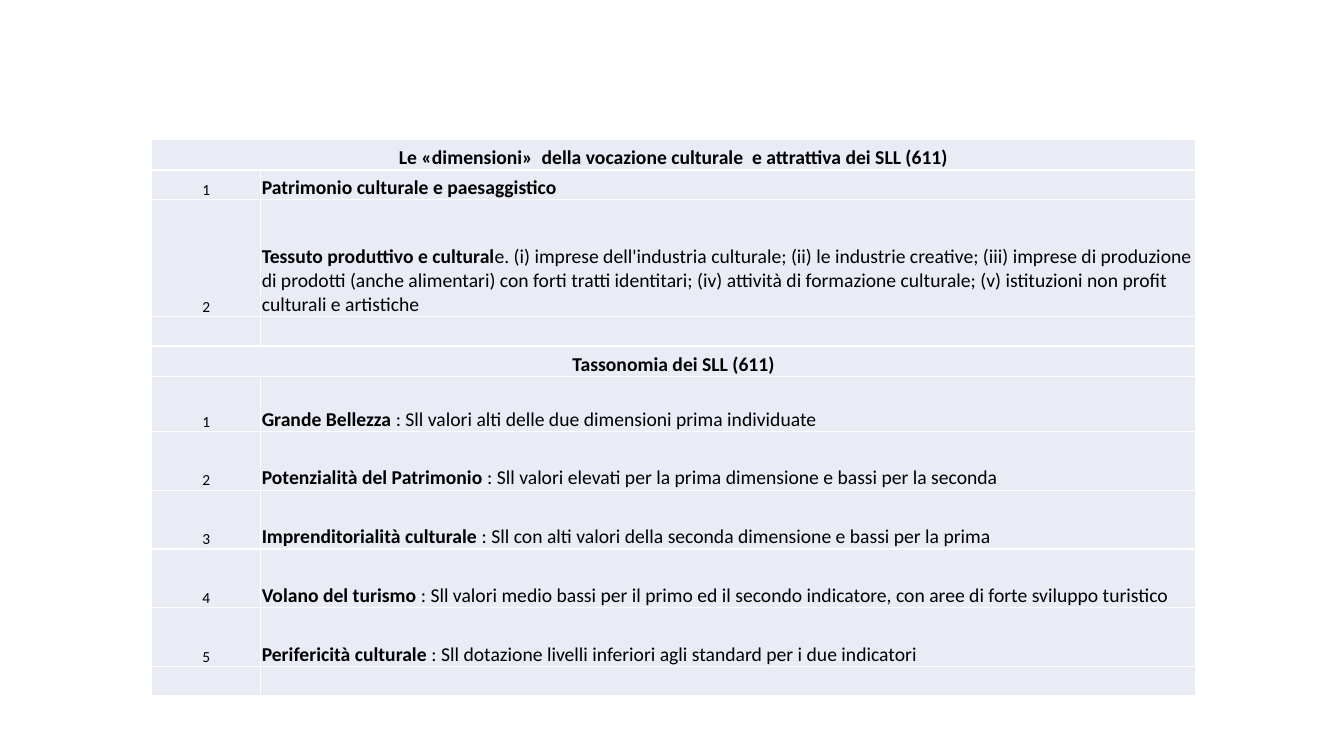
from lxml.etree import SubElement
from pptx import Presentation
from pptx.dml.color import RGBColor
from pptx.enum.text import MSO_ANCHOR, PP_ALIGN
from pptx.oxml.ns import qn
from pptx.util import Pt

COLORS = {"text": "000000", "cell": "E9EBF5", "border": "FFFFFF"}
FONT = "Calibri"
HEADING_SIZE, NUMBER_SIZE = 14, 11
COLUMN_WIDTHS = (78, 667.7)

# (row height, number, bold term, description); a heading has no number
ROWS = [
    (21.6, None, "Le «dimensioni»  della vocazione culturale  e attrattiva dei SLL (611)", ""),
    (20.9, "1", "Patrimonio culturale e paesaggistico", ""),
    (84, "2", "Tessuto produttivo e cultural",
     "e. (i) imprese dell'industria culturale; (ii) le industrie creative; "
     "(iii) imprese di produzione di prodotti (anche alimentari) con forti tratti identitari; "
     "(iv) attività di formazione culturale; (v) istituzioni non profit culturali e artistiche"),
    (20.9, "", "", ""),
    (21.6, None, "Tassonomia dei SLL (611)", ""),
    (39.4, "1", "Grande Bellezza ", ": Sll valori alti delle due dimensioni prima individuate"),
    (42, "2", "Potenzialità del Patrimonio ",
     ": Sll valori elevati per la prima dimensione e bassi per la seconda"),
    (42, "3", "Imprenditorialità culturale ",
     ": Sll con alti valori della seconda dimensione e bassi per la prima"),
    (42, "4", "Volano del turismo ",
     ": Sll valori medio bassi per il primo ed il secondo indicatore, "
     "con aree di forte sviluppo turistico"),
    (42, "5", "Perifericità culturale ",
     ": Sll dotazione livelli inferiori agli standard per i due indicatori"),
    (20.9, "", "", ""),
]


def add_borders(cell):
    properties = cell._tc.get_or_add_tcPr()
    for side in ("a:lnL", "a:lnR", "a:lnT", "a:lnB"):
        line = SubElement(properties, qn(side), w=str(Pt(1)))
        fill = SubElement(line, qn("a:solidFill"))
        SubElement(fill, qn("a:srgbClr"), val=COLORS["border"])


def style_cell(cell):
    add_borders(cell)
    cell.fill.solid()
    cell.fill.fore_color.rgb = RGBColor.from_string(COLORS["cell"])
    cell.vertical_anchor = MSO_ANCHOR.BOTTOM
    cell.margin_left = cell.margin_right = cell.margin_top = Pt(0.7)
    cell.margin_bottom = Pt(0)


def write_cell(cell, spans, size, align):
    """Write (text, bold) spans; an empty cell only gets its font size."""
    para = cell.text_frame.paragraphs[0]
    para.alignment = align
    for text, bold in spans:
        if text:
            span = para.add_run()
            span.text = text
            span.font.name = FONT
            span.font.size = Pt(size)
            span.font.bold = bold
            span.font.color.rgb = RGBColor.from_string(COLORS["text"])
    if not para.runs:
        SubElement(para._p, qn("a:endParaRPr"), sz=str(size * 100))


def add_dimension_table(page):
    heights = [row[0] for row in ROWS]
    frame = page.shapes.add_table(len(ROWS), len(COLUMN_WIDTHS), Pt(108.3), Pt(99.8),
                                  Pt(sum(COLUMN_WIDTHS)), Pt(sum(heights)))
    table = frame.table
    table.first_row = table.horz_banding = False
    for column, width in zip(table.columns, COLUMN_WIDTHS):
        column.width = Pt(width)
    for cell in table.iter_cells():
        style_cell(cell)
    for index, (height, number, term, description) in enumerate(ROWS):
        table.rows[index].height = Pt(height)
        left, right = table.cell(index, 0), table.cell(index, 1)
        if number is None:
            left.merge(right)
            write_cell(left, [(term, True)], HEADING_SIZE, PP_ALIGN.CENTER)
        else:
            write_cell(left, [(number, False)], NUMBER_SIZE, PP_ALIGN.CENTER)
            write_cell(right, [(term, True), (description, False)], HEADING_SIZE, PP_ALIGN.LEFT)


def main():
    deck = Presentation()
    deck.slide_width, deck.slide_height = Pt(960), Pt(540)
    page = deck.slides.add_slide(deck.slide_layouts[6])
    add_dimension_table(page)
    deck.save("out.pptx")


if __name__ == "__main__":
    main()
